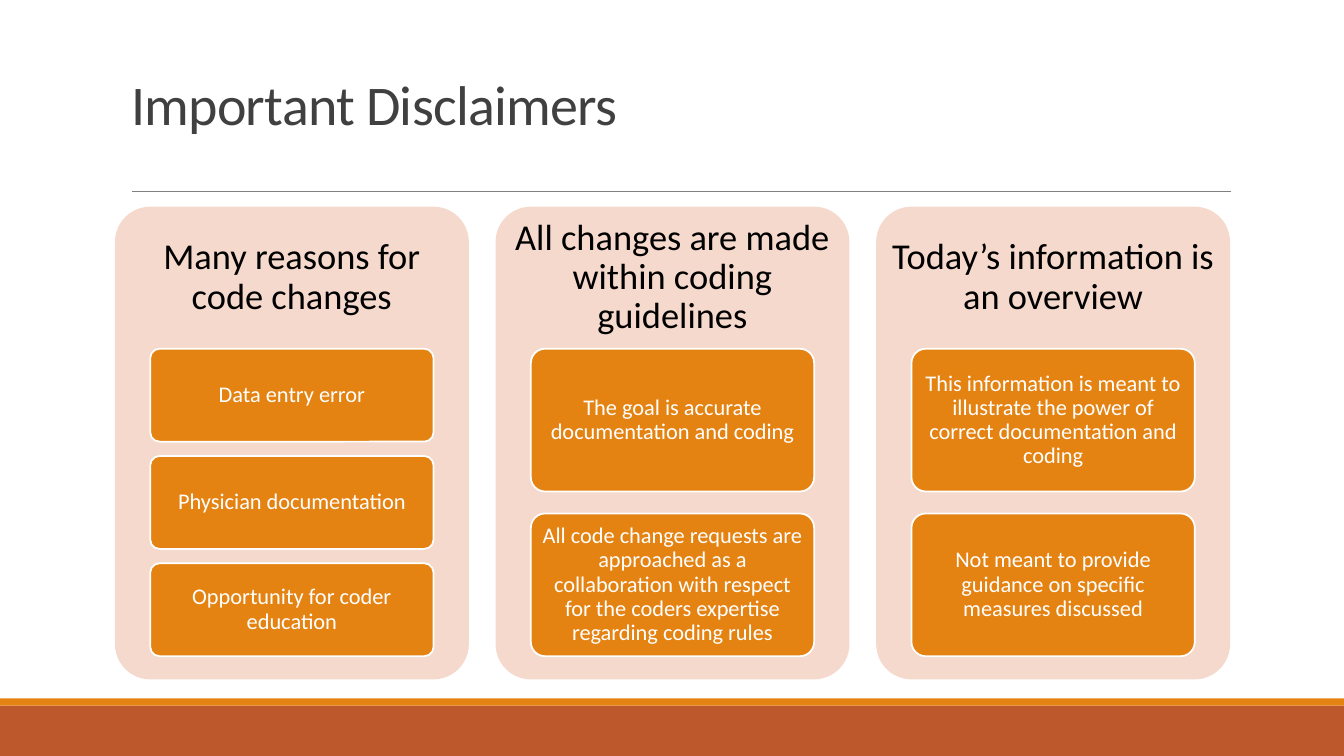
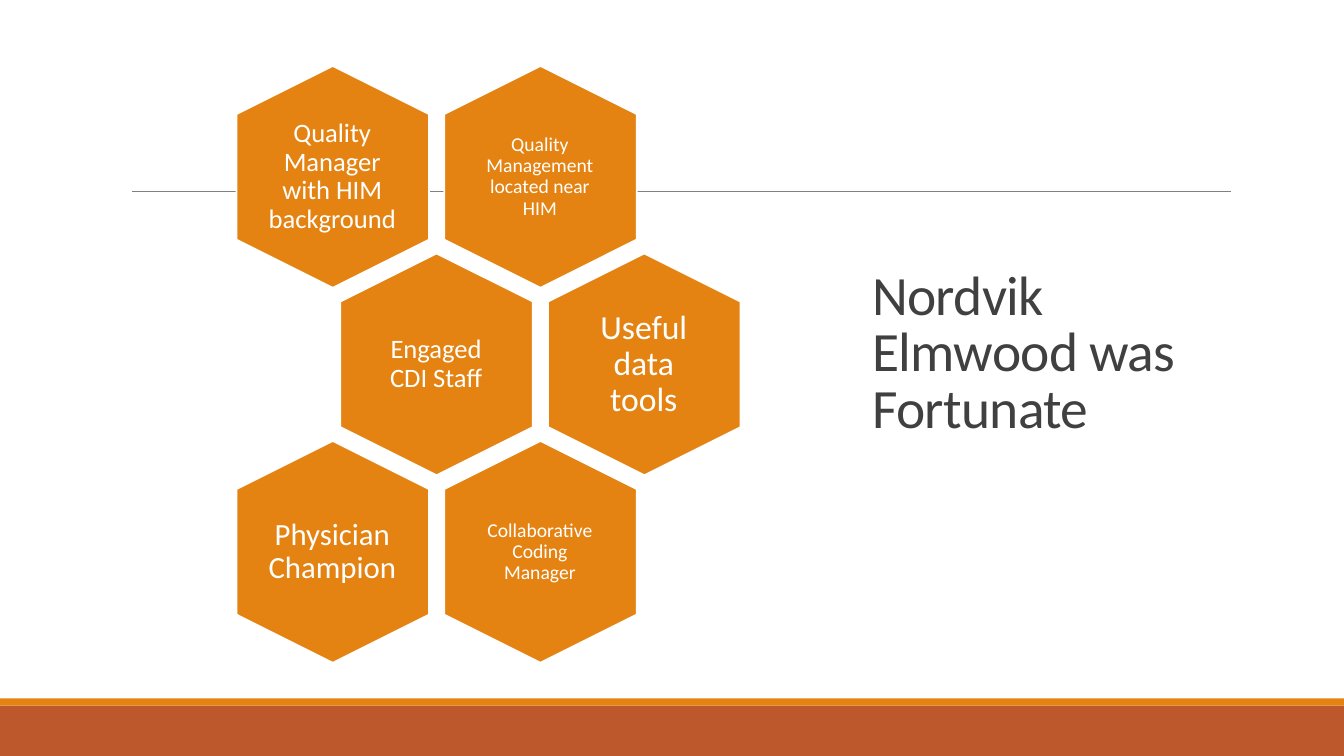
from lxml import etree
from pptx import Presentation
from pptx.dml.color import RGBColor
from pptx.enum import shapes, text
from pptx.oxml import ns
from pptx.util import Inches, Pt

# Content
PANELS = [
    ("Many reasons for code changes",
     ["Data entry error", "Physician documentation",
      "Opportunity for coder education"]),
    ("All changes are made within coding guidelines",
     ["The goal is accurate documentation and coding",
      "All code change requests are approached as a collaboration with "
      "respect for the coders expertise regarding coding rules"]),
    ("Today’s information is an overview",
     ["This information is meant to illustrate the power of correct "
      "documentation and coding",
      "Not meant to provide guidance on specific measures discussed"]),
]
# Rows of the honeycomb: label, text size, inset
HONEYCOMB = [
    [("Quality Manager with HIM background", 19, 0),
     ("Quality Management located near HIM", 14, 0.06)],
    [("Engaged CDI Staff", 19, 0.08), ("Useful data tools", 24, 0)],
    [("Physician Champion", 22, 0), ("Collaborative Coding Manager", 14, 0.06)],
]

# Shared style
FONT = "Calibri"
COLORS = {"rust": "BD582C", "orange": "E48312", "blush": "F5D9CC",
          "rule": "808080", "title": "404040", "black": "000000",
          "white": "FFFFFF"}
SHAPE = shapes.MSO_SHAPE


def color(name):
    return RGBColor.from_string(COLORS[name])


def write(shape, words, size, ink="white", align=text.PP_ALIGN.CENTER,
          anchor=text.MSO_ANCHOR.MIDDLE, spacing=0.9,
          insets=(0.1, 0.05, 0.1, 0.05), tracking=None):
    frame = shape.text_frame
    frame.word_wrap = True
    frame.auto_size = text.MSO_AUTO_SIZE.NONE
    frame.vertical_anchor = anchor
    (frame.margin_left, frame.margin_top,
     frame.margin_right, frame.margin_bottom) = map(Inches, insets)
    para = frame.paragraphs[0]
    para.alignment, para.line_spacing = align, spacing
    span = para.add_run()
    span.text = words
    span.font.name, span.font.size = FONT, Pt(size)
    span.font.color.rgb = color(ink)
    if tracking is not None:
        for props in shape.element.iter(ns.qn("a:rPr")):
            props.set("spc", str(int(tracking * 100)))


def add_block(page, kind, left, top, width, height, fill, outline=None):
    block = page.shapes.add_shape(kind, *map(Inches, (left, top, width, height)))
    block.shadow.inherit = False
    block.fill.solid()
    block.fill.fore_color.rgb = color(fill)
    if outline:
        block.line.color.rgb = color(outline)
        block.line.width = Pt(1.25)
    else:
        block.line.fill.background()
    return block


def add_label(page, left, top, width, height, words, size, **style):
    box = page.shapes.add_textbox(*map(Inches, (left, top, width, height)))
    write(box, words, size, **style)


def set_title(page, words, left, top, width, height, size, right_inset=0.1):
    title = page.shapes.title
    title.left, title.top, title.width, title.height = map(
        Inches, (left, top, width, height))
    write(title, words, size, ink="title", align=text.PP_ALIGN.LEFT,
          anchor=text.MSO_ANCHOR.BOTTOM, spacing=0.85,
          insets=(0.1, 0.05, right_inset, 0.05), tracking=-0.5)


def decorate_layout(layout, page):
    """Draw the bands and rule, then move them into the shared layout."""
    rule = page.shapes.add_connector(
        shapes.MSO_CONNECTOR.STRAIGHT,
        *map(Inches, (1.31, 1.9, 12.21, 1.9)))
    rule.line.color.rgb = color("rule")
    rule.line.width = Pt(0.5)
    etree.SubElement(rule.element.spPr, ns.qn("a:effectLst"))
    parts = [add_block(page, SHAPE.RECTANGLE, 0, 7, 13.33, 0.5, "rust"),
             add_block(page, SHAPE.RECTANGLE, 0, 6.93, 13.33, 0.07, "orange"),
             rule]
    for number, part in enumerate(parts, start=101):
        part.element.xpath(".//p:cNvPr")[0].set("id", str(number))
        layout.shapes.element.append(part.element)


def build_disclaimers(page):
    set_title(page, "Important Disclaimers", 1.2, 0.31, 11, 1.1, 40)
    top, width, pitch = 2.05, 3.51, 3.775
    cards_top, cards_height, gap_ratio = 3.46, 3.05, 0.154
    for column, (heading, cards) in enumerate(PANELS):
        left = 1.14 + column * pitch
        panel = add_block(page, SHAPE.ROUNDED_RECTANGLE,
                          left, top, width, 4.69, "blush")
        panel.adjustments[0] = 0.1
        add_label(page, left, top, width, 1.41, heading, 26,
                  ink="black", insets=(0.11,) * 4)
        # Cards share the panel height, with gaps in proportion to them
        height = cards_height / (len(cards) + (len(cards) - 1) * gap_ratio)
        for row, words in enumerate(cards):
            card = add_block(page, SHAPE.ROUNDED_RECTANGLE, left + 0.35,
                             cards_top + row * height * (1 + gap_ratio),
                             2.81, height, "orange", outline="white")
            card.adjustments[0] = 0.1
            write(card, words, 16, insets=(0.04, 0.03, 0.04, 0.03))


def build_honeycomb(page):
    set_title(page, "Nordvik Elmwood was Fortunate",
              8.55, 2.82, 4.08, 1.59, 39.6, right_inset=0.5)
    column_pitch, row_pitch = 2.06, 1.86
    for row, cells in enumerate(HONEYCOMB):
        for column, (words, size, inset) in enumerate(cells):
            left = 2.2 + (column + row % 2 / 2) * column_pitch
            top = 0.8 + row * row_pitch
            cell = add_block(page, SHAPE.HEXAGON, left, top, 2.2, 1.91,
                             "orange", outline="white")
            cell.adjustments[0] = 0.25
            cell.rotation = 90
            # A separate label stays upright over the turned hexagon
            add_label(page, left + 0.44, top + 0.2, 1.31, 1.51, words, size,
                      insets=(inset,) * 4)


def main():
    deck = Presentation()
    deck.slide_width, deck.slide_height = Inches(13.33), Inches(7.5)
    layout = deck.slide_layouts.get_by_name("Title Only")
    pages = [deck.slides.add_slide(layout) for _ in range(2)]
    decorate_layout(layout, pages[0])
    build_disclaimers(pages[0])
    build_honeycomb(pages[1])
    deck.save("out.pptx")


if __name__ == "__main__":
    main()
